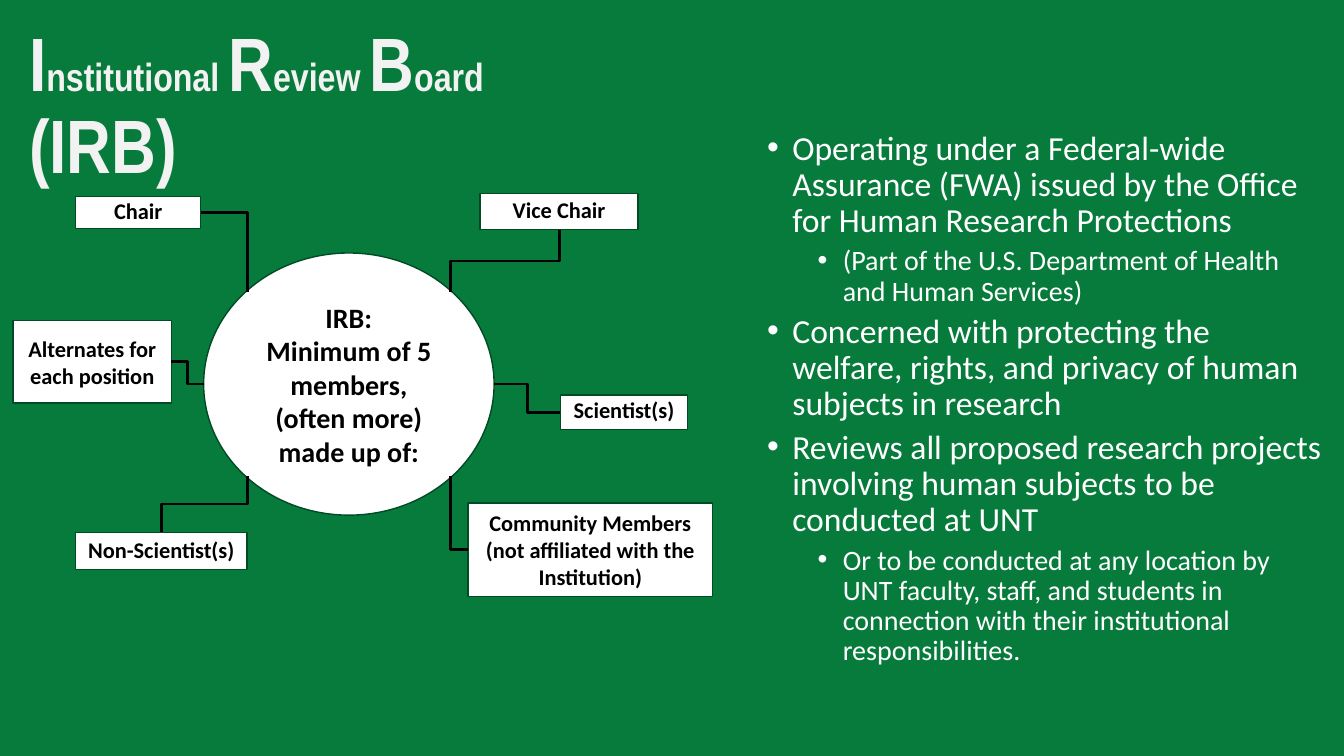
from typing import NamedTuple

from lxml.etree import SubElement
from pptx import Presentation
from pptx.dml.color import RGBColor
from pptx.enum.shapes import MSO_CONNECTOR, MSO_SHAPE
from pptx.enum.text import MSO_ANCHOR, PP_ALIGN
from pptx.oxml.ns import qn
from pptx.util import Inches, Pt

WIDE, HIGH = Inches(13.33), Inches(7.5)
GREEN, EDGE, WHITE, PALE, BLACK = "077B3B", "004A24", "FFFFFF", "F2F2F2", "000000"


class Box(NamedTuple):
    """Left, top, width and height in percent of the slide."""
    left: float
    top: float
    width: float
    height: float

    def spot(self, across: float, down: float) -> tuple[float, float]:
        return (across_x(self.left + across * self.width),
                down_y(self.top + down * self.height))

    def frame(self) -> tuple[int, int, int, int]:
        return (across_x(self.left), down_y(self.top),
                across_x(self.width), down_y(self.height))


class Part(NamedTuple):
    box: Box
    lines: list[str]
    size: int = 16
    gap: float = 1.0
    form: MSO_SHAPE = MSO_SHAPE.RECTANGLE


class Link(NamedTuple):
    """Ends are a part's name and shares of its width and height."""
    start: tuple[str, float, float]
    end: tuple[str, float, float]
    bends: int
    upright: bool = False


def across_x(share: float) -> int:
    return round(WIDE * share / 100)


def down_y(share: float) -> int:
    return round(HIGH * share / 100)


def tint(code: str) -> RGBColor:
    return RGBColor.from_string(code)


def style(font, size: int | None, color: str, face: str = "Calibri", bold: bool = False) -> None:
    font.name, font.bold = face, bold
    font.color.rgb = tint(color)
    if size:
        font.size = Pt(size)


def add_part(part: Part) -> None:
    shape = slide.shapes.add_shape(part.form, *part.box.frame())
    shape.shadow.inherit = False
    shape.fill.solid()
    shape.fill.fore_color.rgb = tint(WHITE)
    shape.line.color.rgb = tint(EDGE)
    shape.line.width = Pt(1)
    text = shape.text_frame
    text.word_wrap = True
    text.vertical_anchor = MSO_ANCHOR.MIDDLE
    text.text = "\n".join(part.lines)
    for para in text.paragraphs:
        para.alignment = PP_ALIGN.CENTER
        para.line_spacing = part.gap
        style(para.font, part.size, BLACK, bold=True)


def add_link(link: Link) -> None:
    (x1, y1), (x2, y2) = (parts[name].box.spot(across, down)
                          for name, across, down in (link.start, link.end))
    if link.upright:  # lay the line flat about its centre, then turn it
        mid_x, mid_y = (x1 + x2) / 2, (y1 + y2) / 2
        half_x, half_y = (x2 - x1) / 2, (y2 - y1) / 2
        x1, x2 = mid_x - half_y, mid_x + half_y
        y1, y2 = mid_y + half_x, mid_y - half_x
    ends = (round(n) for n in (x1, y1, x2, y2))
    line = slide.shapes.add_connector(MSO_CONNECTOR.ELBOW, *ends)
    line.line.color.rgb = tint(BLACK)
    line.line.width = Pt(2)
    props = line._element.spPr
    props.find(qn("a:prstGeom")).set("prst", f"bentConnector{link.bends + 1}")
    if link.upright:
        props.find(qn("a:xfrm")).set("rot", "5400000")
    SubElement(props, qn("a:effectLst"))


def add_text(box: Box):
    text = slide.shapes.add_textbox(*box.frame()).text_frame
    text.word_wrap = True
    return text


deck = Presentation()
deck.slide_width, deck.slide_height = WIDE, HIGH
slide = deck.slides.add_slide(deck.slide_layouts[6])
slide.background.fill.solid()
slide.background.fill.fore_color.rgb = tint(GREEN)

# Bulleted duties
DUTIES = [
    (1, "Operating under a Federal-wide Assurance (FWA) issued by the Office for Human "
        "Research Protections"),
    (2, "(Part of the U.S. Department of Health and Human Services)"),
    (1, "Concerned with protecting the welfare, rights, and privacy of human subjects in research"),
    (1, "Reviews all proposed research projects involving human subjects to be conducted at UNT"),
    (2, "Or to be conducted at any location by UNT faculty, staff, and students in connection "
        "with their institutional responsibilities."),
]
text = add_text(Box(52.59, 16.67, 46.74, 83.33))
for i, (level, words) in enumerate(DUTIES):
    para = text.add_paragraph() if i else text.paragraphs[0]
    para.text = words
    para.level = level
    para.line_spacing = 0.9
    para.space_before = Pt(5 if i else 0)
    props = para._p.get_or_add_pPr()
    props.set("marL", str(Inches(0.25 + level / 2)))
    props.set("indent", str(Inches(-0.25)))
    SubElement(props, qn("a:buFont")).set("typeface", "Arial")
    SubElement(props, qn("a:buChar")).set("char", "•")
    style(para.font, 28 - 4 * level, WHITE)

# Title with large initials
para = add_text(Box(1.43, 2.8, 42.46, 9.2)).paragraphs[0]
para.line_spacing = 0.9
style(para.font, None, PALE, "Arial Narrow", True)
TITLE = ["I", "nstitutional ", "R", "eview ", "B", "oard ", "(IRB)"]
for i, words in enumerate(TITLE):
    run = para.add_run()
    run.text = words
    run.font.size = Pt(28 if i % 2 else 54)

# Board and its members
parts = {
    "vice": Part(Box(35.71, 25.6, 11.78, 4.8), ["Vice Chair"], gap=0.9),
    "lay": Part(Box(5.63, 70.4, 12.75, 4.93), ["Non-Scientist(s)"], gap=0.9),
    "expert": Part(Box(41.71, 52.27, 9.45, 4.53), ["Scientist(s)"], gap=0.8),
    "chair": Part(Box(5.63, 26, 9.3, 4.27), ["Chair"], gap=0.8),
    "board": Part(Box(15.15, 33.47, 21.61, 34.67),
                  ["IRB:", "Minimum of 5 members, (often more) made up of:"],
                  size=20, form=MSO_SHAPE.OVAL),
    "public": Part(Box(34.81, 66.53, 18.23, 12.4),
                   ["Community Members", "(not affiliated with the Institution)"]),
    "spare": Part(Box(0.98, 42.4, 11.78, 10.93), ["Alternates for each position"]),
}
for part in parts.values():
    add_part(part)

# Elbow lines; near and far are the oval's diagonal points
near, far = 0.15, 0.85
LINKS = [
    Link(("chair", 1, 0.5), ("board", near, near), 1),
    Link(("vice", 0.5, 1), ("board", far, near), 2, True),
    Link(("expert", 0, 0.5), ("board", 1, 0.5), 2),
    Link(("board", far, far), ("public", 0, 0.5), 1, True),
    Link(("board", near, far), ("lay", 0.5, 0), 2, True),
    Link(("spare", 1, 0.5), ("board", 0, 0.5), 2),
]
for link in LINKS:
    add_link(link)

deck.save("out.pptx")
